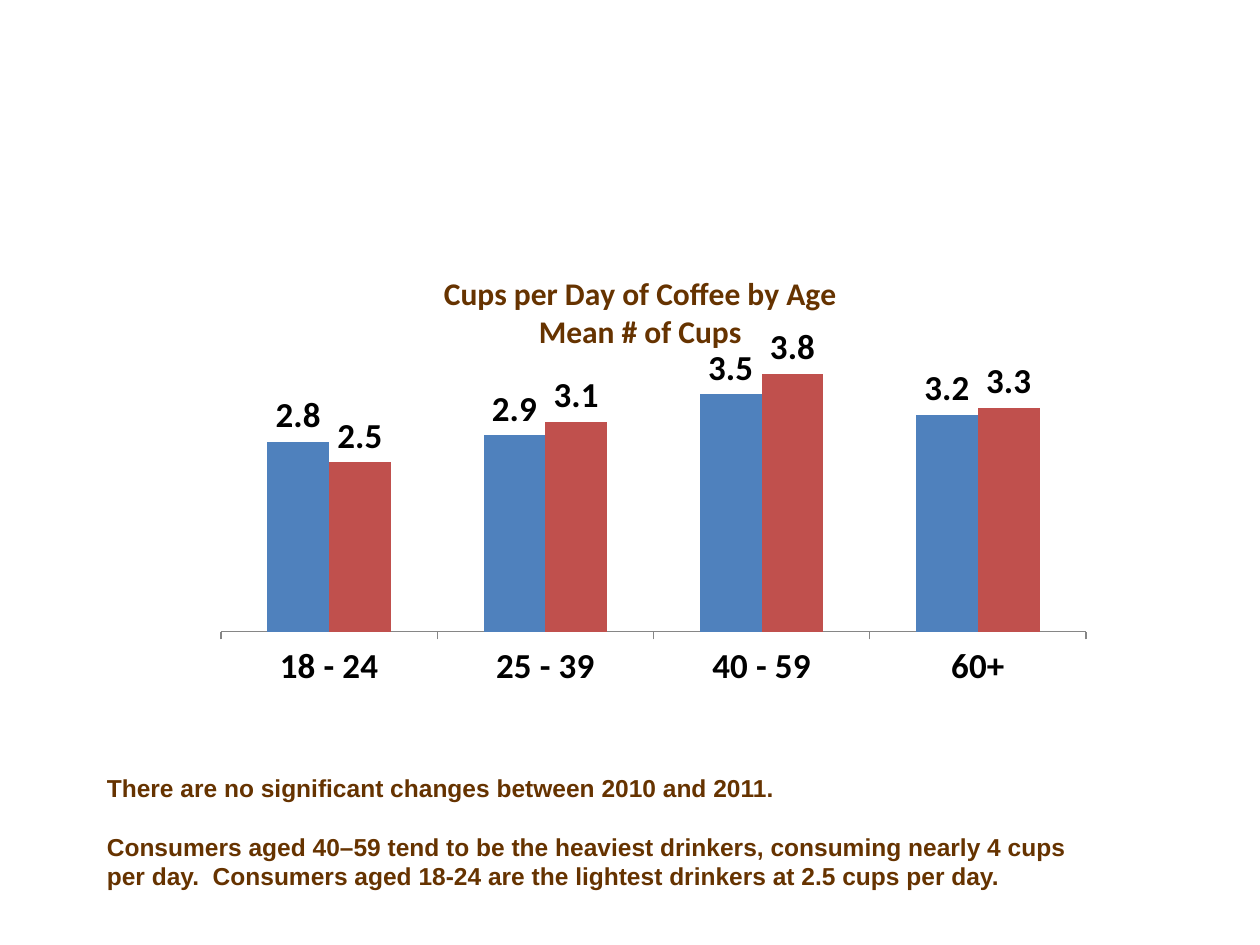
from dataclasses import dataclass

import pptx
import pptx.chart.data
import pptx.dml.color
import pptx.enum.chart
import pptx.enum.text
import pptx.oxml
import pptx.oxml.ns
import pptx.util

Pt = pptx.util.Pt
RGB = pptx.dml.color.RGBColor.from_string


@dataclass(frozen=True)
class Theme:
    ink: str = "000000"
    brown: str = "663300"
    axis: str = "868686"
    series: tuple = ("4F81BD", "C0504D")
    chart_font: str = "Calibri"
    body_font: str = "Arial"
    title_size: int = 18
    label_size: int = 20
    body_size: int = 14


THEME = Theme()
AGES = ["18 - 24", "25 - 39", "40 - 59", "60+"]
CUPS = {"2010": (2.8, 2.9, 3.5, 3.2), "2011": (2.5, 3.1, 3.8, 3.3)}
CHART_TITLE = ["Cups per Day of Coffee by Age", "Mean # of Cups"]
FINDINGS = [
    "There are no significant changes between 2010 and 2011.",
    "Consumers aged 40–59 tend to be the heaviest drinkers, consuming nearly 4 cups "
    "per day.  Consumers aged 18-24 are the lightest drinkers at 2.5 cups per day.",
]


def set_attributes(target, values):
    for name, value in values.items():
        setattr(target, name, value)


def format_font(font, size, color, name):
    set_attributes(font, {"size": Pt(size), "bold": True, "name": name})
    font.color.rgb = RGB(color)


def write_paragraphs(frame, lines, size, name, gap=0):
    """Write brown bold paragraphs, with a gap before all but the first."""
    for index, line in enumerate(lines):
        para = frame.add_paragraph() if index else frame.paragraphs[0]
        if index and gap:
            para.space_before = Pt(gap)
        span = para.add_run()
        span.text = line
        format_font(span.font, size, THEME.brown, name)


def fix_plot_area(chart, x, y, w, h):
    """Pin the inner plot area, in fractions of the chart."""
    qn = pptx.oxml.ns.qn
    area = chart.element.find(".//" + qn("c:plotArea"))
    for layout in area.findall(qn("c:layout")):
        area.remove(layout)
    places = "".join(f'<c:{key} val="{value}"/>' for key, value in
                     zip(("x", "y", "w", "h"), (x, y, w, h)))
    area.insert(0, pptx.oxml.parse_xml(
        f'<c:layout {pptx.oxml.ns.nsdecls("c")}><c:manualLayout>'
        '<c:layoutTarget val="inner"/><c:xMode val="edge"/><c:yMode val="edge"/>'
        f'{places}</c:manualLayout></c:layout>'))


def add_cups_chart(page, left, top, width, height):
    kinds = pptx.enum.chart
    data = pptx.chart.data.CategoryChartData(number_format="0.0")
    data.categories = AGES
    for year, cups in CUPS.items():
        data.add_series(year, cups)
    chart = page.shapes.add_chart(
        kinds.XL_CHART_TYPE.COLUMN_CLUSTERED,
        Pt(left), Pt(top), Pt(width), Pt(height), data).chart
    format_font(chart.font, THEME.label_size, THEME.ink, THEME.chart_font)
    chart.has_legend = False
    write_paragraphs(chart.chart_title.text_frame, CHART_TITLE,
                     THEME.title_size, THEME.chart_font)
    chart.chart_title.include_in_layout = False

    set_attributes(chart.value_axis, {
        "minimum_scale": 0, "maximum_scale": 4,
        "has_major_gridlines": False, "visible": False})
    chart.category_axis.major_tick_mark = kinds.XL_TICK_MARK.OUTSIDE
    chart.category_axis.format.line.color.rgb = RGB(THEME.axis)

    plot = chart.plots[0]
    set_attributes(plot, {"gap_width": 150, "overlap": 0,
                          "vary_by_categories": False, "has_data_labels": True})
    set_attributes(plot.data_labels, {
        "show_value": True, "number_format": "0.0", "number_format_is_linked": False,
        "position": kinds.XL_LABEL_POSITION.OUTSIDE_END})
    format_font(plot.data_labels.font, THEME.label_size, THEME.ink, THEME.chart_font)
    for series, color in zip(plot.series, THEME.series):
        series.format.fill.solid()
        series.format.fill.fore_color.rgb = RGB(color)
    fix_plot_area(chart, 0.03, 0.22, 0.97, 0.55)


def add_findings(page, left, top, width, height):
    box = page.shapes.add_textbox(Pt(left), Pt(top), Pt(width), Pt(height))
    set_attributes(box.text_frame, {
        "word_wrap": True,
        "auto_size": pptx.enum.text.MSO_AUTO_SIZE.SHAPE_TO_FIT_TEXT})
    write_paragraphs(box.text_frame, FINDINGS, THEME.body_size, THEME.body_font, gap=17)


def main():
    deck = pptx.Presentation()
    set_attributes(deck, {"slide_width": Pt(720), "slide_height": Pt(540)})
    blank_layout = deck.slide_layouts[6]
    page = deck.slides.add_slide(blank_layout)
    add_cups_chart(page, 111, 144, 510, 282)
    add_findings(page, 54, 438, 576, 75)
    deck.save("out.pptx")


if __name__ == "__main__":
    main()
